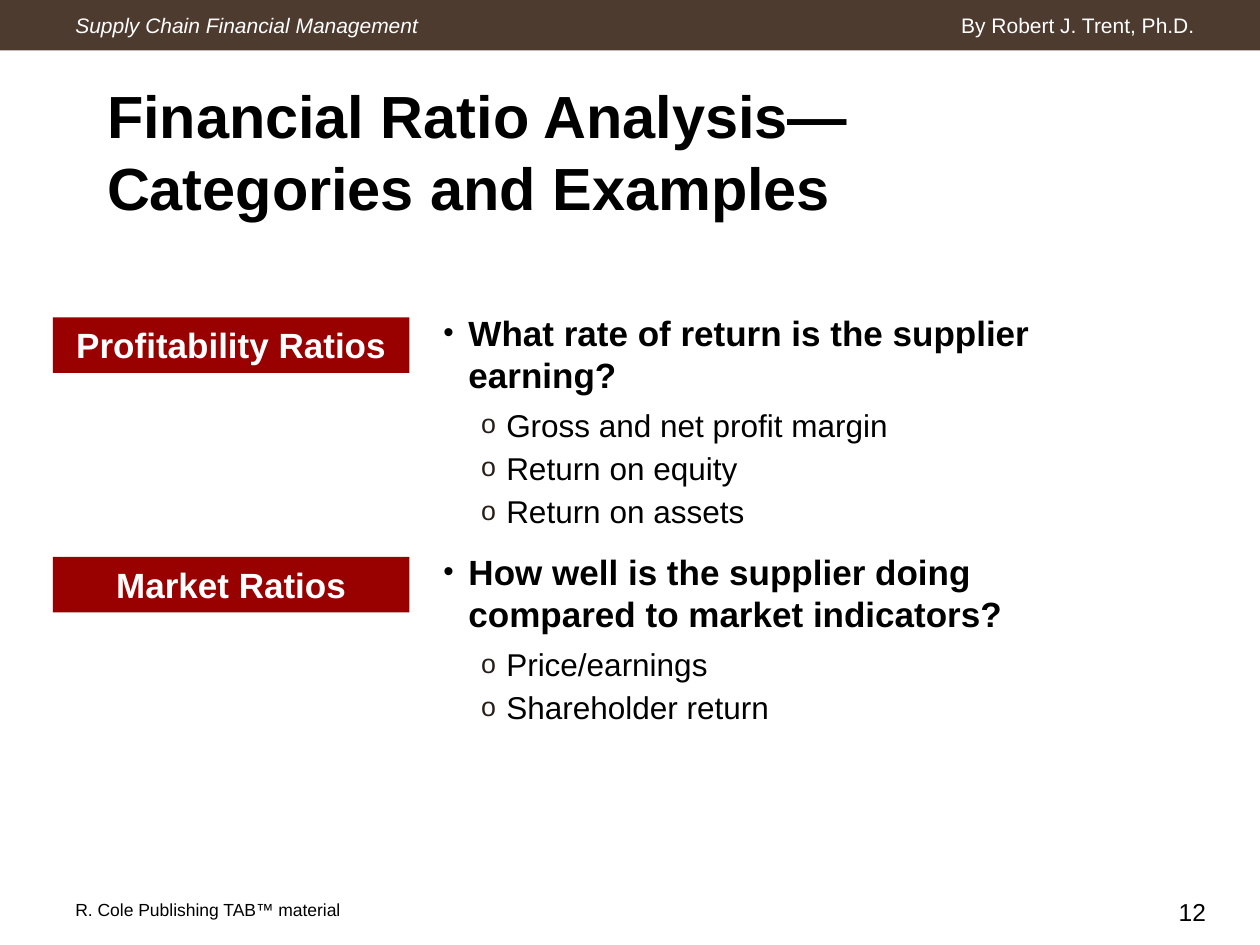
from dataclasses import dataclass

from lxml import etree
from pptx import Presentation
from pptx.dml.color import RGBColor
from pptx.enum.shapes import MSO_SHAPE
from pptx.enum.text import MSO_ANCHOR, MSO_AUTO_SIZE, PP_ALIGN
from pptx.oxml.ns import qn
from pptx.util import Inches, Pt

RECT = MSO_SHAPE.RECTANGLE
TOP, MID = MSO_ANCHOR.TOP, MSO_ANCHOR.MIDDLE
LEFT, MIDST, RIGHT = PP_ALIGN.LEFT, PP_ALIGN.CENTER, PP_ALIGN.RIGHT
FIXED = MSO_AUTO_SIZE.NONE


@dataclass(frozen=True)
class Theme:
    """Colours, font and type sizes of the deck."""
    font: str = "Arial"
    bar: str = "4E3B30"
    badge: str = "990000"
    ink: str = "000000"
    pale: str = "FFFFFF"
    mark: str = "271E18"
    title: int = 34
    head: int = 20
    item: int = 18
    page: int = 14
    strip: int = 12
    foot: int = 10


THEME = Theme()

TOPICS = [
    ("Profitability Ratios", 2.52, "What rate of return is the supplier earning?",
     ["Gross and net profit margin", "Return on equity", "Return on assets"]),
    ("Market Ratios", 4.42,
     "How well is the supplier doing compared to market indicators?",
     ["Price/earnings", "Shareholder return"]),
]


def write(par, text, size, color=THEME.ink, bold=False, italic=False,
          align=LEFT, after=0):
    """Put one formatted run into a paragraph."""
    par.alignment = align
    par.space_before, par.space_after = Pt(0), Pt(after)
    run = par.add_run()
    run.text = text
    font = run.font
    font.name, font.size = THEME.font, Pt(size)
    font.bold, font.italic = bold, italic
    font.color.rgb = RGBColor.from_string(color)


def frame(shape, anchor=TOP):
    """Set wrapping and anchor, and return the text frame."""
    text = shape.text_frame
    text.word_wrap = True
    text.auto_size = FIXED
    text.vertical_anchor = anchor
    return text


def box(slide, at, anchor=TOP):
    """Add a text box and return its frame."""
    return frame(slide.shapes.add_textbox(*map(Inches, at)), anchor)


def block(slide, at, color):
    """Add a plain filled rectangle."""
    shape = slide.shapes.add_shape(RECT, *map(Inches, at))
    shape.shadow.inherit = False
    shape.fill.solid()
    shape.fill.fore_color.rgb = RGBColor.from_string(color)
    shape.line.fill.background()
    return shape


def badge(slide, text, top):
    """Add a red label."""
    shape = block(slide, (0.42, top, 2.83, 0.44), THEME.badge)
    write(frame(shape).paragraphs[0], text, THEME.head,
          color=THEME.pale, bold=True, align=MIDST)


def bullet(par, char, color, indent):
    """Give a paragraph a hanging bullet."""
    props = par._p.get_or_add_pPr()
    props.set("marL", str(Inches(indent)))
    props.set("indent", str(Inches(-0.2)))
    tint = etree.SubElement(props, qn("a:buClr"))
    etree.SubElement(tint, qn("a:srgbClr"), val=color)
    etree.SubElement(props, qn("a:buSzPct"), val="85000")
    etree.SubElement(props, qn("a:buFont"), typeface=THEME.font)
    etree.SubElement(props, qn("a:buChar"), char=char)


def outline(slide, topics):
    """Write each question with its example ratios."""
    text = box(slide, (3.42, 2.42, 5.67, 3.92))
    par = text.paragraphs[0]
    for num, (_, _, ask, items) in enumerate(topics):
        if num:
            par = text.add_paragraph()
        write(par, ask, THEME.head, bold=True, after=6)
        bullet(par, "•", THEME.ink, 0.2)
        for item in items:
            par = text.add_paragraph()
            par.level = 1
            write(par, item, THEME.item, after=3)
            bullet(par, "o", THEME.mark, 0.5)
        par.space_after = Pt(12)


def title(slide, text):
    """Place and fill the title."""
    shape = slide.shapes.title
    shape.left, shape.top = Inches(0.75), Inches(0.58)
    shape.width, shape.height = Inches(7.92), Inches(1.25)
    write(frame(shape).paragraphs[0], text, THEME.title, bold=True)


def label(slide, at, text, size, **style):
    """Add one line of text centred in height."""
    write(box(slide, at, MID).paragraphs[0], text, size, **style)


def main():
    """Build and save the slide."""
    deck = Presentation()
    deck.slide_width, deck.slide_height = Inches(10), Inches(7.5)
    slide = deck.slides.add_slide(deck.slide_layouts[5])
    block(slide, (0, 0, 10, 0.4), THEME.bar)
    title(slide, "Financial Ratio Analysis—Categories and Examples")
    outline(slide, TOPICS)
    for name, top, _, _ in TOPICS:
        badge(slide, name, top)
    label(slide, (0.5, 0.02, 3.17, 0.36), "Supply Chain Financial Management",
          THEME.strip, color=THEME.pale, italic=True)
    label(slide, (3.75, 0.02, 5.83, 0.36), "By Robert J. Trent, Ph.D.",
          THEME.strip, color=THEME.pale, align=RIGHT)
    label(slide, (0.5, 7.08, 2.75, 0.27), "R. Cole Publishing TAB™ material",
          THEME.foot)
    label(slide, (8.5, 7.06, 1.17, 0.36), "12", THEME.page, align=RIGHT)
    deck.save("out.pptx")


if __name__ == "__main__":
    main()
